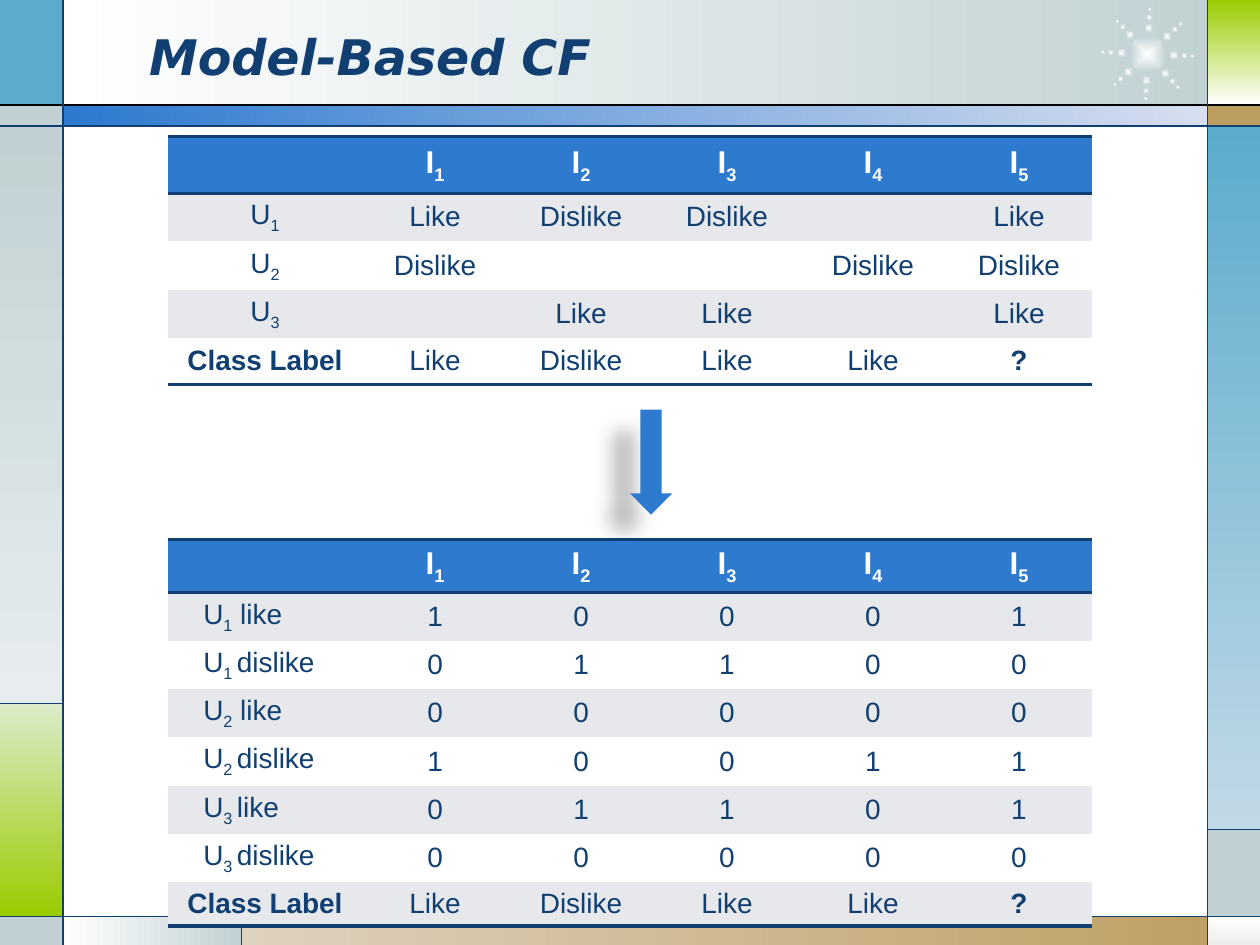
from math import cos, radians, sin

from lxml.etree import SubElement
from pptx import Presentation
from pptx.dml.color import RGBColor
from pptx.enum.shapes import MSO_CONNECTOR, MSO_SHAPE
from pptx.enum.text import MSO_ANCHOR, PP_ALIGN
from pptx.oxml import parse_xml
from pptx.oxml.ns import nsdecls, qn
from pptx.util import Inches, Pt

NAVY = RGBColor(0x11, 0x3F, 0x71)
BLUE = RGBColor(0x2D, 0x7A, 0xCF)
PALE_BLUE = RGBColor(0xD7, 0xDE, 0xF0)
CYAN = RGBColor(0x5A, 0xAB, 0xCC)
PALE_CYAN = RGBColor(0xC2, 0xD9, 0xE7)
MIST = RGBColor(0xC1, 0xD1, 0xD3)
PALE_MIST = RGBColor(0xE7, 0xED, 0xEE)
GREEN = RGBColor(0x99, 0xCC, 0x00)
PALE_GREEN = RGBColor(0xDB, 0xEB, 0xC9)
TAN = RGBColor(0xBD, 0x9E, 0x61)
PALE_TAN = RGBColor(0xDE, 0xD1, 0xBF)
GRAY = RGBColor(0xE7, 0xE8, 0xEB)
PALE_GRAY = RGBColor(0xED, 0xED, 0xED)
BLACK = RGBColor(0, 0, 0)
WHITE = RGBColor(0xFF, 0xFF, 0xFF)

RIGHT, DOWN = 0, 270  # gradient directions
NO_STYLE = "{2D5ABB26-0587-4C30-8999-92F81FD0307C}"


def grid(n):
    """Length of n cells on a grid of 120 columns by 90 rows."""
    return Inches(n / 12)


class Deck:
    title_font, table_font = "DejaVu Sans", "Arial"

    def __init__(self, prs):
        self.s = prs.slides.add_slide(prs.slide_layouts[5])

    def shape(self, kind, x, y, w, h, *colors, angle=RIGHT):
        sp = self.s.shapes.add_shape(kind, *map(grid, (x, y, w, h)))
        sp.shadow.inherit = False
        sp.line.fill.background()
        if len(colors) == 1:
            sp.fill.solid()
            sp.fill.fore_color.rgb = colors[0]
        else:
            sp.fill.gradient()
            sp.fill.gradient_angle = angle
            for stop, color in zip(sp.fill.gradient_stops, colors):
                stop.color.rgb = color
        return sp

    def glow(self, cx, cy, size):
        sp = self.shape(MSO_SHAPE.OVAL, cx - size / 2, cy - size / 2, size, size, WHITE, MIST)
        lin = sp.element.spPr.find(".//" + qn("a:lin"))
        lin.getparent().replace(lin, parse_xml(
            f'<a:path {nsdecls("a")} path="shape">'
            '<a:fillToRect l="50000" t="50000" r="50000" b="50000"/></a:path>'))

    def line(self, x1, y1, x2, y2, color=NAVY):
        c = self.s.shapes.add_connector(MSO_CONNECTOR.STRAIGHT, *map(grid, (x1, y1, x2, y2)))
        c.line.color.rgb = color
        c.line.width = Pt(0.75)
        SubElement(c.element.spPr, qn("a:effectLst"))

    def title(self, text, x, y, w, h):
        sp = self.s.shapes.title
        self.s.shapes[-1].element.addnext(sp.element)  # in front of the frame
        sp.left, sp.top, sp.width, sp.height = map(grid, (x, y, w, h))
        tf = sp.text_frame
        tf.text = text
        tf.vertical_anchor = MSO_ANCHOR.MIDDLE
        p = tf.paragraphs[0]
        p.alignment = PP_ALIGN.LEFT
        font = p.runs[0].font
        font.name, font.size, font.color.rgb = self.title_font, Pt(28), NAVY
        font.bold = font.italic = True

    def arrow(self, x, y, w, h):
        sp = self.shape(MSO_SHAPE.DOWN_ARROW, x, y, w, h, BLUE)
        effects = sp.element.spPr.find(qn("a:effectLst"))
        effects.append(parse_xml(
            f'<a:outerShdw {nsdecls("a")} blurRad="{Pt(11.8)}" dist="{Pt(19.7)}" '
            f'dir="{141 * 60000}" algn="ctr" rotWithShape="0">'
            '<a:srgbClr val="000000"><a:alpha val="28000"/></a:srgbClr></a:outerShdw>'))

    def border(self, cell, sides):
        tcPr = cell._tc.get_or_add_tcPr()
        for i, side in enumerate(sides):
            tcPr.insert(i, parse_xml(
                f'<a:ln{side} {nsdecls("a")} w="{Pt(2)}"><a:solidFill>'
                f'<a:srgbClr val="{NAVY}"/></a:solidFill></a:ln{side}>'))

    def cell_text(self, cell, text, size, color, bold):
        """Write text in which ~ opens and closes a subscript."""
        cell.vertical_anchor = MSO_ANCHOR.MIDDLE
        p = cell.text_frame.paragraphs[0]
        p.alignment = PP_ALIGN.CENTER
        for i, part in enumerate(text.split("~") if text else []):
            r = p.add_run()
            r.text = part
            font = r.font
            font.name, font.size, font.bold = self.table_font, Pt(size), bold
            font.color.rgb = color
            if i % 2:
                r._r.get_or_add_rPr().set("baseline", "-25000")
        SubElement(p._p, qn("a:endParaRPr")).set("sz", str(size * 100))

    def table(self, x, y, w, rows, head_h, row_h, indent_labels=False):
        n_rows, n_cols = len(rows), len(rows[0])
        height = head_h + row_h * (n_rows - 1)
        frame = self.s.shapes.add_table(n_rows, n_cols, *map(grid, (x, y, w, height)))
        next(frame.element.iter(qn("a:tableStyleId"))).text = NO_STYLE
        table = frame.table
        label_w = 0.21 * w
        for j, col in enumerate(table.columns):
            col.width = grid(label_w if j == 0 else (w - label_w) / (n_cols - 1))
        for i, row in enumerate(rows):
            head, last = i == 0, i == n_rows - 1
            table.rows[i].height = grid(row_h if i else head_h)
            for j, text in enumerate(row):
                cell = table.cell(i, j)
                cell.fill.solid()
                cell.fill.fore_color.rgb = BLUE if head else GRAY if i % 2 else WHITE
                self.border(cell, "TB" if head else "B" if last else "")
                bold = head or text in ("Class Label", "?")
                self.cell_text(cell, text, 18 if head else 16, WHITE if head else NAVY, bold)
                if indent_labels and j == 0 and not (head or last):
                    cell.margin_left = Inches(0.28)
                    cell.text_frame.paragraphs[0].alignment = PP_ALIGN.LEFT


def main():
    prs = Presentation()
    prs.slide_width, prs.slide_height = grid(120), grid(90)
    deck = Deck(prs)

    # Frame of coloured bands
    for x, y, w, h, colors, angle in [
        (6, 0, 111.2, 10, (WHITE, MIST), RIGHT),
        (0, 0, 6, 10, (CYAN,), None),
        (0, 10, 6, 2, (MIST,), None),
        (0, 12, 6, 55, (MIST, PALE_MIST), DOWN),
        (0, 67, 6, 20.3, (PALE_GREEN, GREEN), DOWN),
        (0, 87.3, 6, 2.7, (MIST,), None),
        (6, 87.3, 17, 2.7, (WHITE, MIST), RIGHT),
        (23, 87.3, 97, 2.7, (PALE_TAN, TAN), RIGHT),
        (115, 87.3, 5, 2.7, (WHITE, PALE_GRAY), DOWN),
        (115, 79, 5, 8.3, (MIST,), None),
        (115, 12, 5, 67, (CYAN, PALE_CYAN), DOWN),
        (115, 10, 5, 2, (TAN,), None),
        (115, 0, 5, 10, (GREEN, WHITE), DOWN),
        (6, 10, 109, 2, (BLUE, PALE_BLUE), RIGHT),
    ]:
        deck.shape(MSO_SHAPE.RECTANGLE, x, y, w, h, *colors, angle=angle)

    # Sunburst: eight arms of three shrinking dots
    cx, cy = 109.3, 5.15
    deck.glow(cx, cy, 3.6)
    for arm in range(8):
        angle = radians(45 * arm + 2.5)
        for radius, size in [(2.5, 0.9), (3.5, 0.6), (4.25, 0.4)]:
            deck.glow(cx + radius * cos(angle), cy + radius * sin(angle), size)

    # Rules between the bands
    deck.line(0, 10, 120, 10, BLACK)
    for y in (12, 87.3):
        deck.line(0, y, 120, y)
    for x in (6, 115):
        deck.line(x, 0, x, 90)
    deck.line(6, 67, 0, 67)
    deck.line(23, 87.3, 23, 90)
    deck.line(115, 79, 120, 79)

    deck.title("Model-Based CF", 13, 1.56, 88, 7.44)
    deck.arrow(60, 39, 4, 10)

    # Ratings and their binary features
    header = [""] + [f"I~{n}~" for n in range(1, 6)]
    classes = ["Class Label", "Like", "Dislike", "Like", "Like", "?"]
    ratings = [
        ["U~1~", "Like", "Dislike", "Dislike", "", "Like"],
        ["U~2~", "Dislike", "", "", "Dislike", "Dislike"],
        ["U~3~", "", "Like", "Like", "", "Like"],
    ]
    features = [
        ["U~1~ like", *"10001"],
        ["U~1 ~dislike", *"01100"],
        ["U~2~ like", *"00000"],
        ["U~2 ~dislike", *"10011"],
        ["U~3 ~like", *"01101"],
        ["U~3 ~dislike", *"00000"],
    ]
    deck.table(16, 13, 88, [header, *ratings, classes], 5.4, 4.4)
    deck.table(16, 51.4, 88, [header, *features, classes], 4.4, 4, indent_labels=True)

    prs.save("out.pptx")


if __name__ == "__main__":
    main()
